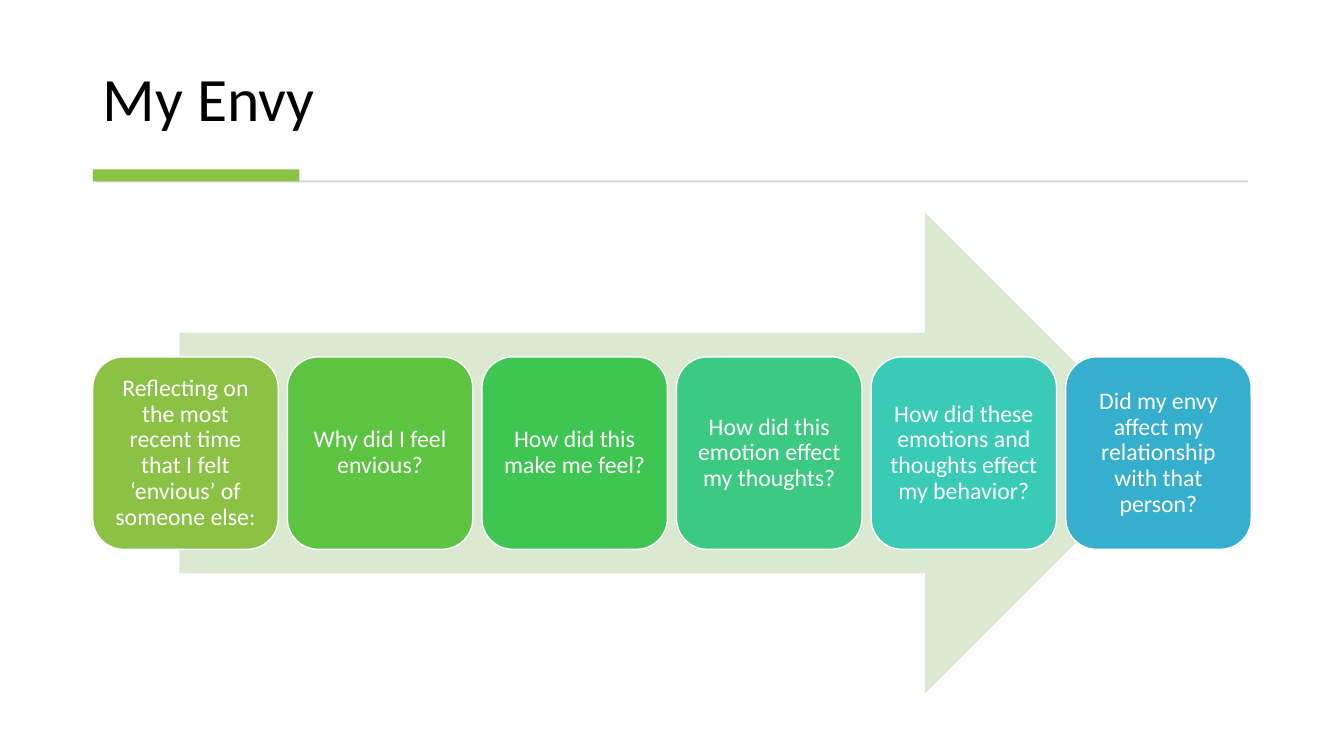
"""Build the "My Envy" slide: six reflection questions along an arrow."""
import pptx
import pptx.util
import pptx.dml.color
import pptx.enum.shapes
import pptx.enum.text

PX = 9144
COLORS = {
    "title": "000000",
    "white": "FFFFFF",
    "rule": "D5D5D5",
    "accent": "8BC145",
    "arrow": "DAE9CF",
    "reflect": "8BC145",
    "why": "5DC442",
    "feeling": "3FC652",
    "thoughts": "3CC982",
    "behavior": "39CBB5",
    "relationship": "36AFCE",
}
QUESTIONS = [
    ("reflect", "Reflecting on the most recent time that I felt ‘envious’ of someone else:"),
    ("why", "Why did I feel envious?"),
    ("feeling", "How did this make me feel?"),
    ("thoughts", "How did this emotion effect my thoughts?"),
    ("behavior", "How did these emotions and thoughts effect my behavior?"),
    ("relationship", "Did my envy affect my relationship with that person?"),
]
CARD_LEFT, CARD_TOP, CARD_WIDTH, CARD_HEIGHT = 92, 354, 184, 191
CARD_STEP = 193
CARD_INSET = 7

SHAPES = pptx.enum.shapes.MSO_SHAPE
ALIGN = pptx.enum.text.PP_ALIGN
ANCHOR = pptx.enum.text.MSO_ANCHOR


def rgb(name):
    return pptx.dml.color.RGBColor.from_string(COLORS[name])


def add_filled(kind, left, top, width, height, color):
    shape = slide.shapes.add_shape(kind, left * PX, top * PX, width * PX, height * PX)
    shape.shadow.inherit = False
    shape.fill.solid()
    shape.fill.fore_color.rgb = rgb(color)
    shape.line.fill.background()
    return shape


presentation = pptx.Presentation()
presentation.slide_width = 1333 * PX
presentation.slide_height = 750 * PX
slide = presentation.slides.add_slide(presentation.slide_layouts[5])

title = slide.shapes.title
title.left, title.top, title.width, title.height = 92 * PX, 28 * PX, 1149 * PX, 111 * PX
title.text_frame.text = "My Envy"
title.text_frame.auto_size = pptx.enum.text.MSO_AUTO_SIZE.NONE
title.text_frame.vertical_anchor = ANCHOR.BOTTOM
paragraph = title.text_frame.paragraphs[0]
paragraph.alignment = ALIGN.LEFT
paragraph.line_spacing = 0.9
paragraph.font.name = "Calibri"
paragraph.font.size = pptx.util.Pt(44)
paragraph.font.color.rgb = rgb("title")

add_filled(SHAPES.RECTANGLE, 95, 179, 1143, 2, "rule")
add_filled(SHAPES.RECTANGLE, 92, 168, 205, 12, "accent")
add_filled(SHAPES.RIGHT_ARROW, 178, 211, 978, 477, "arrow")

for index, (color, question) in enumerate(QUESTIONS):
    card = add_filled(SHAPES.ROUNDED_RECTANGLE, CARD_LEFT + index * CARD_STEP, CARD_TOP,
                      CARD_WIDTH, CARD_HEIGHT, color)
    card.line.color.rgb = rgb("white")
    card.line.width = pptx.util.Pt(1)
    frame = card.text_frame
    frame.word_wrap = True
    frame.vertical_anchor = ANCHOR.MIDDLE
    frame.margin_left = frame.margin_right = CARD_INSET * PX
    frame.margin_top = frame.margin_bottom = CARD_INSET * PX
    frame.text = question
    paragraph = frame.paragraphs[0]
    paragraph.alignment = ALIGN.CENTER
    paragraph.line_spacing = 0.9
    paragraph.font.name = "Calibri"
    paragraph.font.size = pptx.util.Pt(17)
    paragraph.font.color.rgb = rgb("white")

presentation.save("out.pptx")
